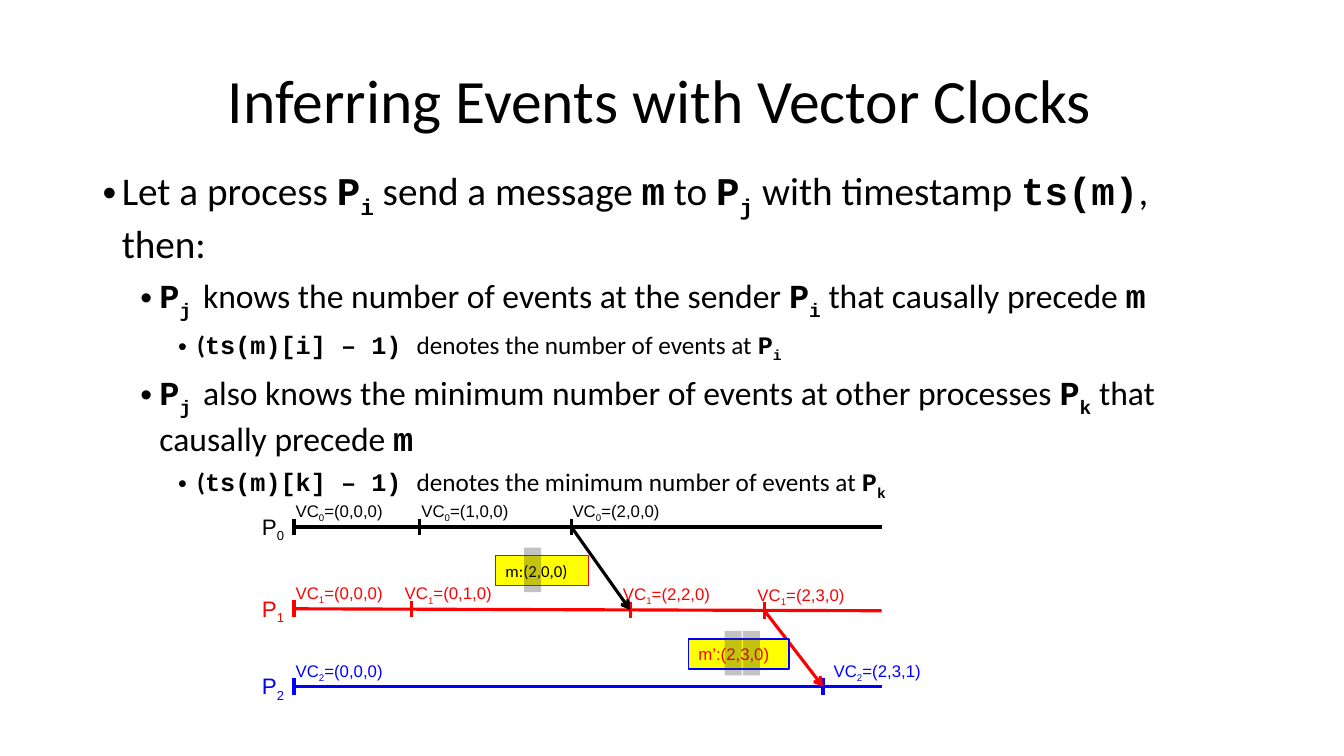
import pptx
import pptx.util
import pptx.dml.color
import pptx.enum.shapes
import pptx.enum.text
import pptx.oxml.ns
from lxml import etree

Cm, Pt = pptx.util.Cm, pptx.util.Pt
RGBColor = pptx.dml.color.RGBColor
MSO_SHAPE = pptx.enum.shapes.MSO_SHAPE
qn = pptx.oxml.ns.qn

BLACK = RGBColor(0x00, 0x00, 0x00)
RED = RGBColor(0xFF, 0x00, 0x00)
BLUE = RGBColor(0x00, 0x00, 0xFF)
YELLOW = RGBColor(0xFF, 0xFF, 0x00)
GREY = RGBColor(0x3B, 0x38, 0x38)

# Run style: font, bold, subscript
PLAIN = ("Calibri", False, False)
BOLD = ("Calibri", True, False)
CODE = ("Courier New", True, False)
CODE_SUB = ("Courier New", True, True)
LABEL = ("Arial", False, False)
LABEL_SUB = ("Arial", False, True)

TITLE = "Inferring Events with Vector Clocks"

# Level, runs
POINTS = [
    (0, [("Let a process ", PLAIN), ("P", CODE), ("i", CODE_SUB),
         (" send a message ", PLAIN), ("m", CODE), (" to ", PLAIN),
         ("P", CODE), ("j", CODE_SUB), (" with timestamp ", PLAIN),
         ("ts(m)", CODE), (", then:", PLAIN)]),
    (1, [("P", CODE), ("j ", CODE_SUB),
         ("knows the number of events at the sender ", PLAIN),
         ("P", CODE), ("i", CODE_SUB),
         (" that causally precede ", PLAIN), ("m", CODE)]),
    (2, [("(", BOLD), ("ts(m)[i] – 1) ", CODE),
         ("denotes the number of events at ", PLAIN),
         ("P", CODE), ("i", CODE_SUB)]),
    (1, [("P", CODE), ("j ", CODE_SUB),
         ("also knows the minimum number of events at other processes ", PLAIN),
         ("P", CODE), ("k", CODE_SUB),
         (" that causally precede ", PLAIN), ("m", CODE)]),
    (2, [("(", BOLD), ("ts(m)[k] – 1) ", CODE),
         ("denotes the minimum number of events at ", PLAIN),
         ("P", CODE), ("k", CODE_SUB)]),
]
LEVEL_SIZES = [28, 24, 18]

# Colour, y at the left end, y at the right end, events (x, label left, clock)
PROCESSES = [
    (BLACK, 13.28, 13.28, [(7.41, 7.2, "(0,0,0)"), (10.58, 10.37, "(1,0,0)"),
                           (14.4, 14.18, "(2,0,0)")]),
    (RED, 15.34, 15.39, [(7.41, 7.2, "(0,0,0)"), (10.37, 9.95, "(0,1,0)"),
                         (15.88, 15.45, "(2,2,0)"), (19.26, 18.84, "(2,3,0)")]),
    (BLUE, 17.3, 17.3, [(7.41, 7.2, "(0,0,0)"), (20.74, 20.76, "(2,3,1)")]),
]
AXIS_LEFT, AXIS_RIGHT = 7.41, 22.22
TICK = 0.21

# Text, style, text colour, border, (left, top, width), highlight lefts,
# sending (process, event), receiving (process, event)
MESSAGES = [
    ("m:(2,0,0)", PLAIN, BLACK, RED, (12.49, 14.0, 2.34), [13.21], (0, 2), (1, 2)),
    ("m’:(2,3,0)", LABEL, RED, BLUE, (17.35, 16.1, 2.54), [18.26, 18.72], (1, 3), (2, 1)),
]

deck = pptx.Presentation()
deck.slide_width, deck.slide_height = Cm(33.87), Cm(19.05)
slide = deck.slides.add_slide(deck.slide_layouts[6])


def add_runs(paragraph, runs, size, color):
    for text, (font, bold, subscript) in runs:
        run = paragraph.add_run()
        run.text = text
        run.font.name, run.font.size, run.font.bold = font, Pt(size), bold
        run.font.color.rgb = color
        if subscript:
            run.font._element.set("baseline", "-25000")


def add_text(left, top, width, height, runs=(), size=12, color=BLACK):
    frame = slide.shapes.add_textbox(Cm(left), Cm(top), Cm(width), Cm(height)).text_frame
    frame.word_wrap = True
    add_runs(frame.paragraphs[0], runs, size, color)
    return frame


def add_line(start, end, color, arrow=False):
    line = slide.shapes.add_connector(
        pptx.enum.shapes.MSO_CONNECTOR.STRAIGHT, *(Cm(v) for v in (*start, *end)))
    line.line.color.rgb, line.line.width = color, Pt(2.25)
    if arrow:
        etree.SubElement(line.line._get_or_add_ln(), qn("a:tailEnd"), type="arrow")
    etree.SubElement(line._element.spPr, qn("a:effectLst"))


def add_box(left, top, width, height, fill):
    box = slide.shapes.add_shape(MSO_SHAPE.RECTANGLE, Cm(left), Cm(top), Cm(width), Cm(height))
    box.shadow.inherit = False
    box.fill.solid()
    box.fill.fore_color.rgb = fill
    box.line.fill.background()
    return box


def add_bullet(paragraph, level):
    properties = paragraph._p.get_or_add_pPr()
    properties.set("marL", str(Cm(0.48 + 0.95 * level)))
    properties.set("indent", str(Cm(-0.48)))
    etree.SubElement(properties, qn("a:buFont"), typeface="Arial")
    etree.SubElement(properties, qn("a:buChar"), char="•")


def event_point(process, event):
    """Place an event on its process line, which may slope."""
    _, y_left, y_right, events = PROCESSES[process]
    x = events[event][0]
    return x, y_left + (y_right - y_left) * (x - AXIS_LEFT) / (AXIS_RIGHT - AXIS_LEFT)


title = add_text(4.88, 0.76, 23.5, 3.68, [(TITLE, PLAIN)], 44)
title.vertical_anchor = pptx.enum.text.MSO_ANCHOR.MIDDLE
title.paragraphs[0].alignment = pptx.enum.text.PP_ALIGN.CENTER
title.paragraphs[0].line_spacing = 0.9

body = add_text(2.34, 4.06, 28.78, 8.05)
for number, (level, runs) in enumerate(POINTS):
    point = body.add_paragraph() if number else body.paragraphs[0]
    point.level = level
    add_bullet(point, level)
    point.space_before, point.space_after = Pt(3 if number else 0), Pt(3)
    add_runs(point, runs, LEVEL_SIZES[level], BLACK)

for process, (color, y_left, y_right, events) in enumerate(PROCESSES):
    index = (str(process), LABEL_SUB)
    add_line((AXIS_LEFT, y_left), (AXIS_RIGHT, y_right), color)
    add_text(6.35, y_left - 0.48, 1.47, 0.94, [("P", LABEL), index], 16, color)
    for event, (_, label_left, clock) in enumerate(events):
        x, y = event_point(process, event)
        add_line((x, y - TICK), (x, y + TICK), color)
        add_text(label_left, y - 0.78, 2.74, 0.76,
                 [("VC", LABEL), index, ("=" + clock, LABEL)], 12, color)

for text, style, color, border, (left, top, width), highlights, sent, received in MESSAGES:
    add_line(event_point(*sent), event_point(*received), PROCESSES[sent[0]][0], arrow=True)
    message = add_box(left, top, width, 0.76, YELLOW)
    message.line.color.rgb, message.line.width = border, Pt(1)
    message.text_frame.word_wrap = True
    message.text_frame.vertical_anchor = pptx.enum.text.MSO_ANCHOR.TOP
    message.text_frame.paragraphs[0].alignment = pptx.enum.text.PP_ALIGN.LEFT
    add_runs(message.text_frame.paragraphs[0], [(text, style)], 12, color)
    for highlight_left in highlights:
        highlight = add_box(highlight_left, top - 0.2, 0.43, 1.12, GREY)
        tint = highlight._element.spPr.find(qn("a:solidFill")).find(qn("a:srgbClr"))
        etree.SubElement(tint, qn("a:alpha"), val="30000")

deck.save("out.pptx")
